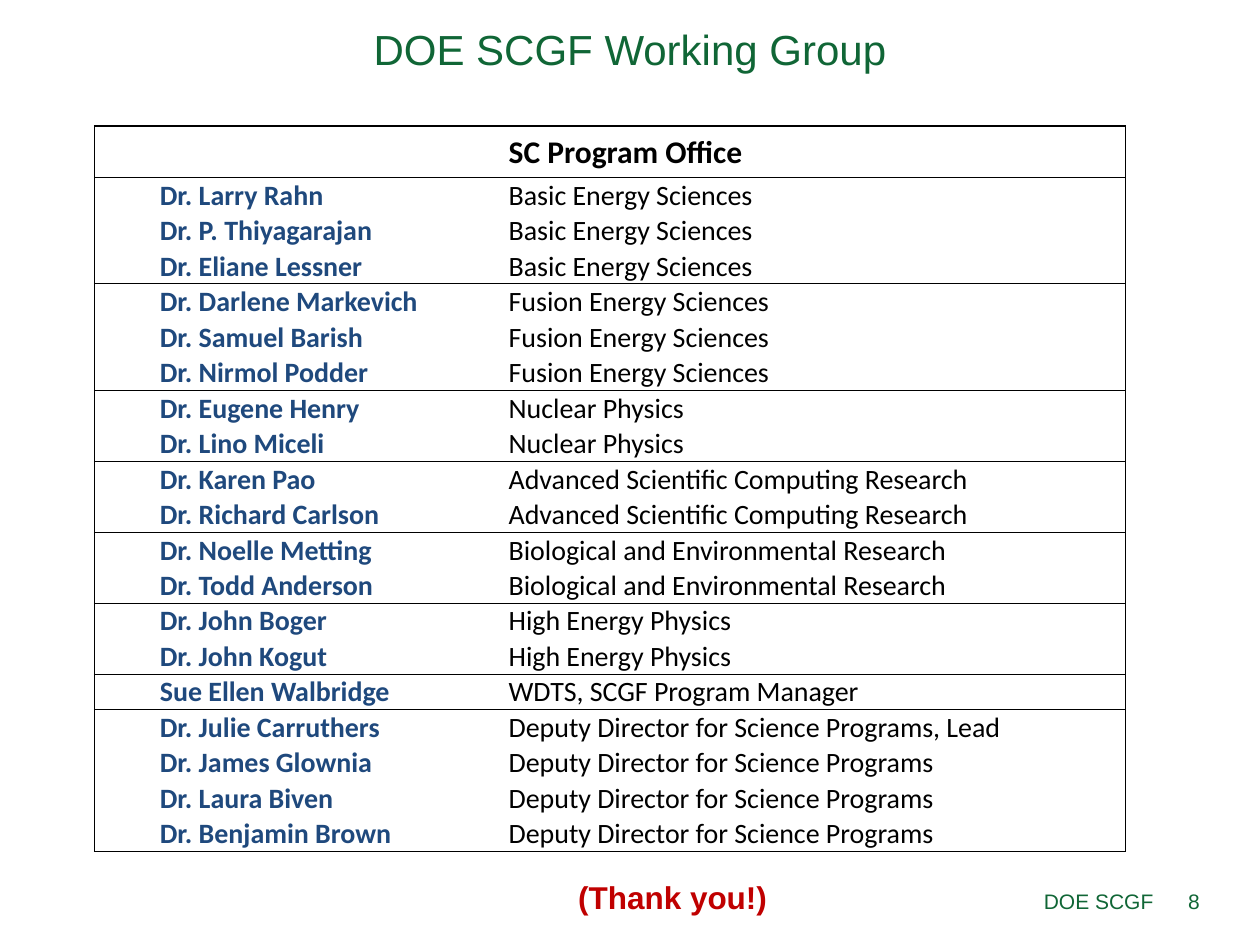
from dataclasses import dataclass

from lxml import etree
from pptx import Presentation
from pptx.dml.color import RGBColor
from pptx.enum.text import MSO_ANCHOR, PP_ALIGN
from pptx.oxml.ns import qn
from pptx.util import Pt

LEFT, CENTER, RIGHT = PP_ALIGN.LEFT, PP_ALIGN.CENTER, PP_ALIGN.RIGHT
TOP, MIDDLE, BOTTOM = MSO_ANCHOR.TOP, MSO_ANCHOR.MIDDLE, MSO_ANCHOR.BOTTOM


@dataclass(frozen=True)
class Theme:
    green: str = "106636"
    red: str = "C00000"
    navy: str = "1F497D"
    black: str = "000000"
    sans: str = "Arial"
    table_font: str = "Calibri"
    title: int = 24
    heading: int = 18
    body: int = 16
    footer: int = 12
    outer_line: float = 1
    inner_line: float = 0.5


T = Theme()

HEADER = "SC Program Office"
LEAD = "Deputy Director for Science Programs"
GROUPS = [
    [(name, "Basic Energy Sciences")
     for name in ("Dr. Larry Rahn", "Dr. P. Thiyagarajan", "Dr. Eliane Lessner")],
    [(name, "Fusion Energy Sciences")
     for name in ("Dr. Darlene Markevich", "Dr. Samuel Barish", "Dr. Nirmol Podder")],
    [(name, "Nuclear Physics") for name in ("Dr. Eugene Henry", "Dr. Lino Miceli")],
    [(name, "Advanced Scientific Computing Research")
     for name in ("Dr. Karen Pao", "Dr. Richard Carlson")],
    [(name, "Biological and Environmental Research")
     for name in ("Dr. Noelle Metting", "Dr. Todd Anderson")],
    [(name, "High Energy Physics") for name in ("Dr. John Boger", "Dr. John Kogut")],
    [("Sue Ellen Walbridge", "WDTS, SCGF Program Manager")],
    [("Dr. Julie Carruthers", f"{LEAD}, Lead")]
    + [(name, LEAD)
       for name in ("Dr. James Glownia", "Dr. Laura Biven", "Dr. Benjamin Brown")],
]

TEXTS = [
    ("DOE SCGF Working Group", (0, -17.3, 720, 90), T.title, T.green, False, CENTER, MIDDLE, True),
    ("DOE SCGF", (246.2, 500.4, 420, 28.8), T.footer, T.green, False, RIGHT, MIDDLE, True),
    ("8", (662.4, 500.4, 30.2, 28.8), T.footer, T.green, False, RIGHT, MIDDLE, True),
    ("(Thank you!)", (323.3, 498.2, 123.8, 28.8), T.heading, T.red, True, LEFT, TOP, False),
]

TABLE_LEFT, TABLE_TOP = 54, 72
COLUMNS = (236, 353.2)
HEADER_HEIGHT, ROW_HEIGHT = 29.4, 20.2
NAME_INDENT = 36.7
CELL_MARGIN = 0.7


def add_run(p, text, font, size, color, bold):
    r = p.add_run()
    r.text = text
    r.font.name = font
    r.font.size = Pt(size)
    r.font.bold = bold
    r.font.color.rgb = RGBColor.from_string(color)


def add_text(slide, text, box, size, color, bold, align, anchor, wrap):
    tf = slide.shapes.add_textbox(*map(Pt, box)).text_frame
    tf.word_wrap = wrap
    tf.vertical_anchor = anchor
    p = tf.paragraphs[0]
    p.alignment = align
    add_run(p, text, T.sans, size, color, bold)


def set_borders(cell, widths):
    tcPr = cell._tc.get_or_add_tcPr()
    for side, width in zip("LRTB", widths):
        ln = etree.SubElement(tcPr, qn(f"a:ln{side}"), w=str(Pt(width)))
        if width:
            fill = etree.SubElement(ln, qn("a:solidFill"))
            etree.SubElement(fill, qn("a:srgbClr"), val=T.black)
        else:
            etree.SubElement(ln, qn("a:noFill"))


def fill_cell(cell, text, size, color, bold, anchor, indent):
    cell.fill.background()
    cell.margin_left = cell.margin_right = cell.margin_top = Pt(CELL_MARGIN)
    cell.margin_bottom = 0
    cell.vertical_anchor = anchor
    p = cell.text_frame.paragraphs[0]
    if indent:
        p._p.get_or_add_pPr().set("marL", str(Pt(indent)))
    if text:
        add_run(p, text, T.table_font, size, color, bold)


def add_members(slide):
    members = [member for group in GROUPS for member in group]
    rows = [("", HEADER)] + members
    group_ends = {0}
    for group in GROUPS:
        group_ends.add(max(group_ends) + len(group))
    last = len(members)
    height = HEADER_HEIGHT + last * ROW_HEIGHT

    table = slide.shapes.add_table(
        len(rows), len(COLUMNS), Pt(TABLE_LEFT), Pt(TABLE_TOP), Pt(sum(COLUMNS)), Pt(height)
    ).table
    table.first_row = table.horz_banding = False
    for column, width in zip(table.columns, COLUMNS):
        column.width = Pt(width)

    def rule_below(i):
        if i in (-1, last):
            return T.outer_line
        return T.inner_line if i in group_ends else 0

    for i, row in enumerate(rows):
        table.rows[i].height = Pt(ROW_HEIGHT if i else HEADER_HEIGHT)
        for j, text in enumerate(row):
            cell = table.cell(i, j)
            is_name = j == 0
            sides = (T.outer_line, 0) if is_name else (0, T.outer_line)
            set_borders(cell, (*sides, rule_below(i - 1), rule_below(i)))
            if i == 0:
                fill_cell(cell, text, T.heading, T.black, True, MIDDLE, 0)
            elif is_name:
                fill_cell(cell, text, T.body, T.navy, True, BOTTOM, NAME_INDENT)
            else:
                fill_cell(cell, text, T.body, T.black, False, BOTTOM, 0)


def main():
    prs = Presentation()
    prs.slide_width, prs.slide_height = Pt(720), Pt(540)
    s = prs.slides.add_slide(prs.slide_layouts[6])
    add_members(s)
    for item in TEXTS:
        add_text(s, *item)
    prs.save("out.pptx")


if __name__ == "__main__":
    main()
